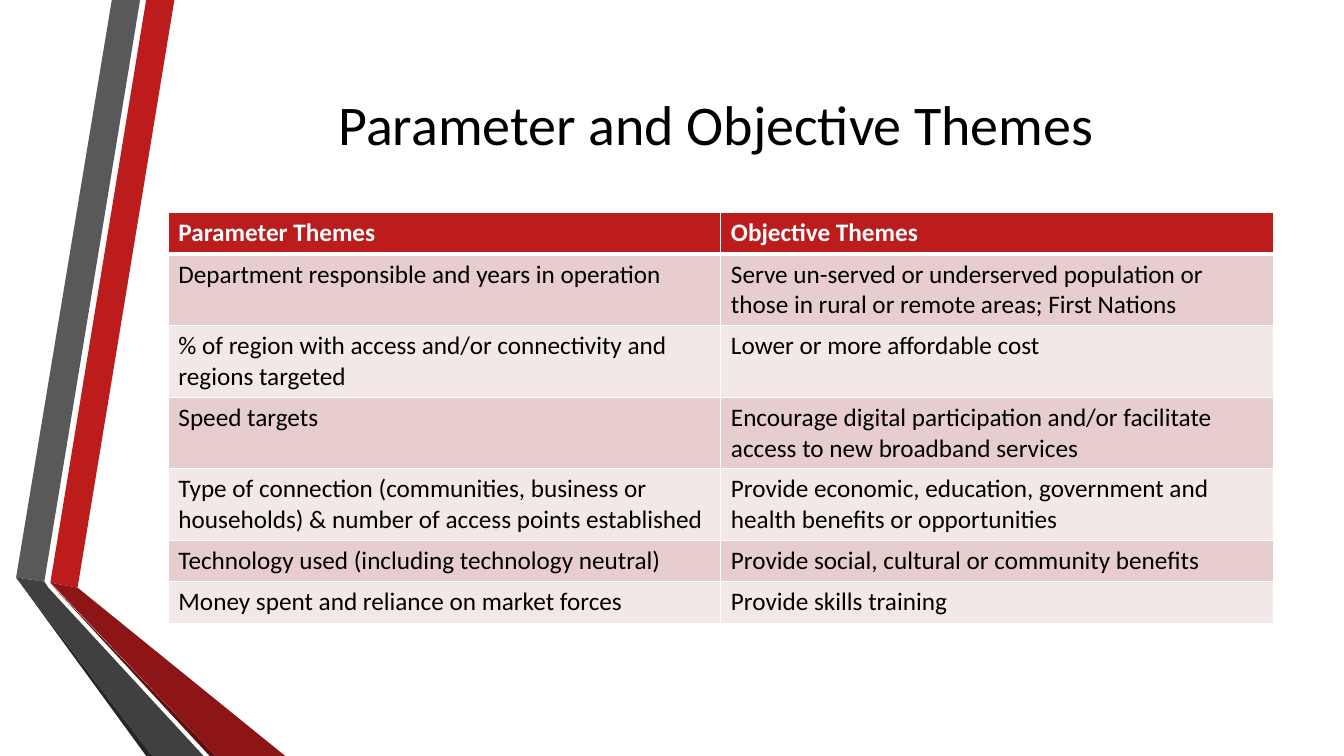
from lxml.etree import SubElement
from pptx import Presentation
from pptx.dml.color import RGBColor as Color
from pptx.enum.text import MSO_ANCHOR as Anchor, PP_ALIGN as Align
from pptx.oxml.ns import qn
from pptx.util import Inches, Pt

COLORS = {
    "black": "000000", "white": "FFFFFF",
    "red": "BC1C1C", "dark red": "8D1515", "deep red": "5E0E0E",
    "gray": "595959", "dark gray": "404040", "deep gray": "262626",
    "band": "E7CDCD", "light band": "F3E8E8",
}


def color(name):
    return Color.from_string(COLORS[name])


def add_border(cell, side, width):
    line = SubElement(cell._tc.get_or_add_tcPr(), qn(f"a:{side}"), w=str(Pt(width)))
    fill = SubElement(line, qn("a:solidFill"))
    SubElement(fill, qn("a:srgbClr"), val=COLORS["white"])


deck = Presentation()
deck.slide_width, deck.slide_height = Inches(13.33), Inches(7.5)
page = deck.slides.add_slide(deck.slide_layouts[5])

# Folded ribbons on the left edge
ribbons = [
    ("red", [(0.5, 5.78), (0.77, 5.83), (1.73, 0), (1.45, 0)]),
    ("gray", [(1.39, 0), (1.11, 0), (0.16, 5.73), (0.44, 5.77)]),
    ("deep gray", [(0.16, 5.73), (1.45, 7.5), (1.51, 7.5)]),
    ("deep red", [(0.5, 5.79), (2.08, 7.5), (2.14, 7.5)]),
    ("dark red", [(0.5, 5.78), (2.14, 7.5), (2.83, 7.5), (0.77, 5.83)]),
    ("dark gray", [(0.16, 5.73), (1.51, 7.5), (2.02, 7.5), (0.48, 5.83), (0.44, 5.77)]),
]
for name, points in ribbons:
    corners = [(Inches(x), Inches(y)) for x, y in points]
    builder = page.shapes.build_freeform(*corners[0])
    builder.add_line_segments(corners[1:], close=True)
    ribbon = builder.convert_to_shape()
    ribbon.shadow.inherit = False
    ribbon.fill.solid()
    ribbon.fill.fore_color.rgb = color(name)
    ribbon.line.fill.background()

# Title
title = page.shapes.title
title.left, title.top = Inches(1.62), Inches(0.75)
title.width, title.height = Inches(10.96), Inches(0.94)
title.text_frame.text = "Parameter and Objective Themes"
title.text_frame.vertical_anchor = Anchor.MIDDLE
para = title.text_frame.paragraphs[0]
para.alignment = Align.CENTER
para.font.name, para.font.size = "Calibri", Pt(40)
para.font.color.rgb = color("black")

# Table of themes
themes = [
    ("Parameter Themes", "Objective Themes"),
    ("Department responsible and years in operation",
     "Serve un-served or underserved population or those in rural or remote areas; First Nations"),
    ("% of region with access and/or connectivity and regions targeted",
     "Lower or more affordable cost"),
    ("Speed targets",
     "Encourage digital participation and/or facilitate access to new broadband services"),
    ("Type of connection (communities, business or households) & number of access points established",
     "Provide economic, education, government and health benefits or opportunities"),
    ("Technology used (including technology neutral)",
     "Provide social, cultural or community benefits"),
    ("Money spent and reliance on market forces", "Provide skills training"),
]
row_height = 0.41
table = page.shapes.add_table(
    len(themes), 2, Inches(1.67), Inches(2.11),
    Inches(10.96), Inches(row_height * len(themes))).table
for row, texts in enumerate(themes):
    table.rows[row].height = Inches(row_height)
    header = row == 0
    fill_name = "red" if header else "band" if row % 2 else "light band"
    for column, text in enumerate(texts):
        cell = table.cell(row, column)
        add_border(cell, "lnL", 1)
        add_border(cell, "lnR", 1)
        add_border(cell, "lnT", 3 if row == 1 else 1)
        add_border(cell, "lnB", 3 if header else 1)
        cell.fill.solid()
        cell.fill.fore_color.rgb = color(fill_name)
        cell.text = text
        font = cell.text_frame.paragraphs[0].font
        font.name, font.size, font.bold = "Calibri", Pt(18), header
        font.color.rgb = color("white" if header else "black")

deck.save("out.pptx")
